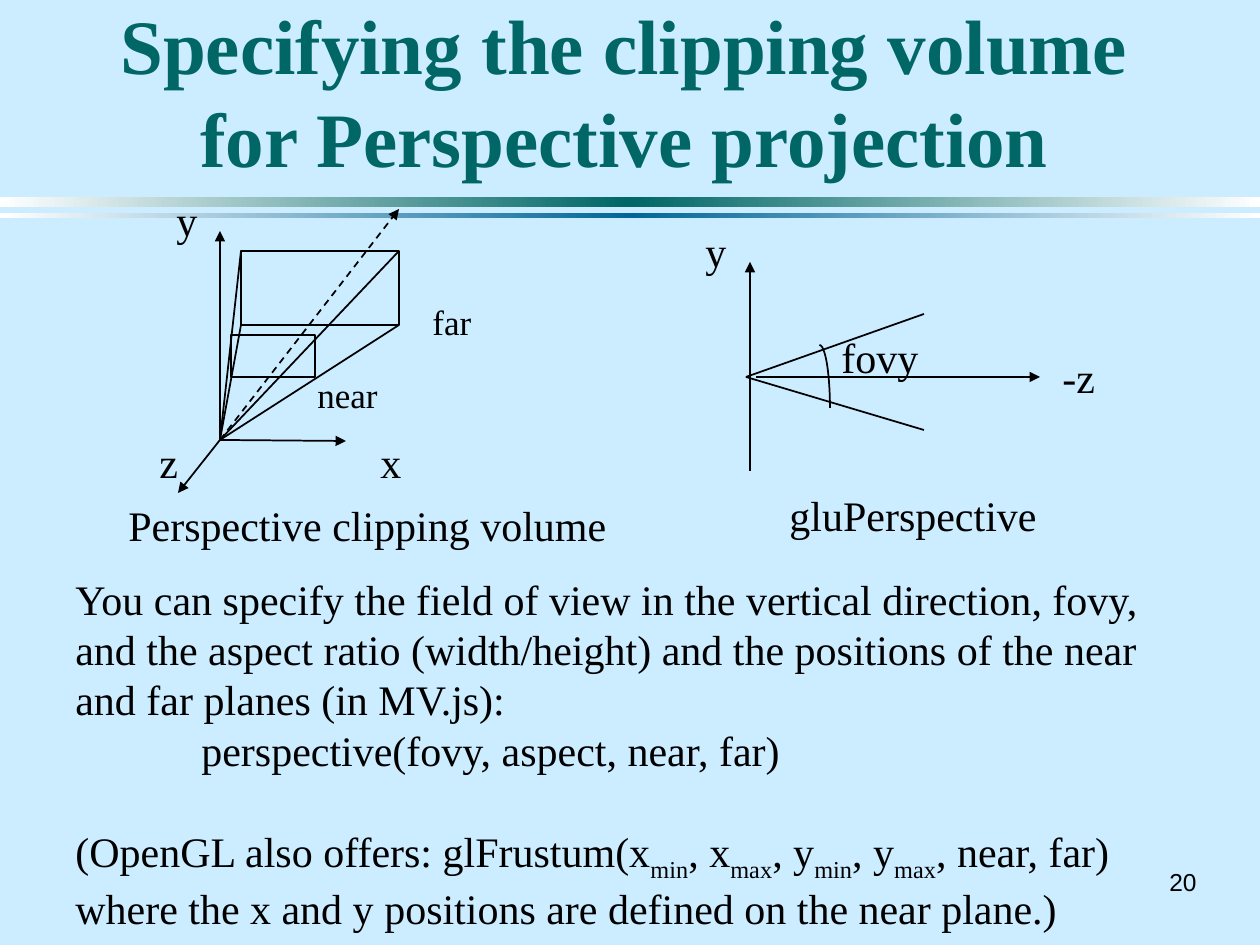
from copy import deepcopy
from dataclasses import dataclass

from pptx import Presentation
from pptx.dml.color import RGBColor as RGB
from pptx.enum.dml import MSO_LINE_DASH_STYLE as Dash
from pptx.enum.shapes import MSO_CONNECTOR as Connector, MSO_SHAPE as Shape
from pptx.enum.text import MSO_ANCHOR as Anchor, MSO_AUTO_SIZE as AutoSize, PP_ALIGN as Align
from pptx.oxml.ns import qn
from pptx.oxml.xmlchemy import OxmlElement
from pptx.util import Pt

EMU_PER_PX = 914400 / 126


@dataclass(frozen=True)
class Theme:
    serif: str = "Times New Roman"
    sans: str = "Arial"
    ink: RGB = RGB(0, 0, 0)
    paper: RGB = RGB(0xCC, 0xEC, 0xFF)
    white: RGB = RGB(0xFF, 0xFF, 0xFF)
    teal: RGB = RGB(0, 0x66, 0x66)
    blue: RGB = RGB(0, 0x66, 0x99)
    title: int = 44
    body: int = 24
    small: int = 20
    number: int = 14
    line: int = 1


THEME = Theme()


def px(*lengths):
    return [round(length * EMU_PER_PX) for length in lengths]


def write(frame, paragraphs, size=THEME.body, font=THEME.serif, color=THEME.ink,
          bold=False, align=Align.LEFT, anchor=Anchor.TOP, wrap=False):
    """Fill a text frame; a paragraph is a list of runs, and "_" opens a subscript."""
    frame.word_wrap = wrap
    frame.auto_size = AutoSize.NONE
    frame.vertical_anchor = anchor
    for index, runs in enumerate(paragraphs):
        paragraph = frame.paragraphs[0] if index == 0 else frame.add_paragraph()
        paragraph.alignment = align
        for words in runs:
            run = paragraph.add_run()
            run.text = words.removeprefix("_")
            run.font.size, run.font.name, run.font.bold = Pt(size), font, bold
            run.font.color.rgb = color
            if words.startswith("_"):
                run.font._element.set("baseline", "-25000")
    return frame


def label(slide, box, words, **style):
    return write(slide.shapes.add_textbox(*px(*box)).text_frame, [[words]], **style)


def line(slide, start, end, arrow=False, dashed=False):
    connector = slide.shapes.add_connector(Connector.STRAIGHT, *px(*start, *end))
    connector.line.color.rgb = THEME.ink
    connector.line.width = Pt(THEME.line)
    if dashed:
        connector.line.dash_style = Dash.DASH
    if arrow:
        head = OxmlElement("a:tailEnd")
        head.set("type", "triangle")
        connector.line._get_or_add_ln().append(head)
    connector._element.spPr.append(OxmlElement("a:effectLst"))


def outline(slide, kind, box):
    shape = slide.shapes.add_shape(kind, *px(*box))
    shape.shadow.inherit = False
    shape.fill.background()
    shape.line.color.rgb = THEME.ink
    shape.line.width = Pt(THEME.line)


def rule(slide, box, color):
    """Bar that fades from its middle colour to white at both ends."""
    bar = slide.shapes.add_shape(Shape.RECTANGLE, *px(*box))
    bar.shadow.inherit = False
    bar.line.fill.background()
    bar.fill.gradient()
    bar.fill.gradient_angle = 0
    stop_list = bar._element.spPr.find(".//" + qn("a:gsLst"))
    stop_list.append(deepcopy(stop_list[0]))
    for stop, position, tone in zip(bar.fill.gradient_stops, (0, 0.5, 1),
                                    (THEME.white, color, THEME.white)):
        stop.position = position
        stop.color.rgb = tone


def header(slide, left, top, width):
    rule(slide, (left, top + 197, width, 10), THEME.teal)
    rule(slide, (left, top + 213, width, 5), THEME.blue)
    title = slide.shapes.title
    title.left, title.top, title.width, title.height = px(left + 84, top + 32, 1081, 157)
    write(title.text_frame, [["Specifying the clipping volume for Perspective projection"]],
          size=THEME.title, color=THEME.teal, bold=True, align=Align.CENTER,
          anchor=Anchor.BOTTOM, wrap=True)


def clipping_volume(slide, left, top):
    """Axes and frustum, with the eye at the origin."""
    eye = (left + 104, top + 252)
    far_left, far_top, far_width, far_height = left + 125, top + 63, 158, 74
    far_right = far_left + far_width

    # Axes y, x, z and the dashed line of sight
    for dx, dy in ((0, -209), (126, 1), (-42, 53)):
        line(slide, eye, (eye[0] + dx, eye[1] + dy), arrow=True)
    line(slide, eye, (far_right, top + 21), arrow=True, dashed=True)

    # Near and far planes, joined to the eye
    outline(slide, Shape.RECTANGLE, (left + 115, top + 147, 84, 42))
    outline(slide, Shape.RECTANGLE, (far_left, far_top, far_width, far_height))
    for x in (far_left, far_right):
        for y in (far_top, far_top + far_height):
            line(slide, eye, (x, y))

    for words, x, y, width in (("y", 48, 0, 47), ("z", 31, 242, 44), ("x", 252, 242, 47)):
        label(slide, (left + x, top + y, width, 63), words)
    for words, x, y, width in (("near", 189, 179, 86), ("far", 304, 106, 64)):
        label(slide, (left + x, top + y, width, 54), words, size=THEME.small)
    label(slide, (left, top + 305, 508, 64), "Perspective clipping volume")


def field_of_view(slide, left, top):
    """Side view of the opening angle."""
    axis_x, axis_y = left + 57, top + 158
    line(slide, (axis_x, top + 252), (axis_x, top + 43), arrow=True)
    line(slide, (left + 63, axis_y), (left + 347, axis_y), arrow=True)
    for dy in (-63, 53):
        line(slide, (left + 53, axis_y), (left + 231, axis_y + dy))
    outline(slide, Shape.ARC, (left + 116, top + 126, 21, 126))

    for words, x, y, width in (("y", 0, 0, 47), ("-z", 357, 126, 58),
                               ("fovy", 136, 106, 165), ("gluPerspective", 84, 264, 272)):
        label(slide, (left + x, top + y, width, 63), words)


def explanation(slide, box):
    bounds = ["(OpenGL also offers: glFrustum(x", "_min", ", x", "_max",
              ", y", "_min", ", y", "_max", ", near, far)"]
    frame = slide.shapes.add_textbox(*px(*box)).text_frame
    write(frame, [
        ["You can specify the field of view in the vertical direction, fovy, and the aspect "
         "ratio (width/height) and the positions of the near and far planes (in MV.js):"],
        ["perspective(fovy, aspect, near, far)"],
        bounds,
        ["where the x and y positions are defined on the near plane.)"],
    ], wrap=True)
    call, alternative = frame.paragraphs[1:3]
    call._p.get_or_add_pPr().set("marL", str(px(126)[0]))
    alternative.space_before = Pt(29)


def main():
    deck = Presentation()
    deck.slide_width, deck.slide_height = px(1260, 945)
    slide = deck.slides.add_slide(deck.slide_layouts[5])
    slide.background.fill.solid()
    slide.background.fill.fore_color.rgb = THEME.paper

    header(slide, 0, 0, 1260)
    clipping_volume(slide, 116, 188)
    field_of_view(slide, 693, 219)
    explanation(slide, (63, 567, 1157, 376))
    label(slide, (1155, 861, 54, 42), "20", size=THEME.number, font=THEME.sans,
          align=Align.RIGHT, anchor=Anchor.MIDDLE)
    deck.save("out.pptx")


if __name__ == "__main__":
    main()
